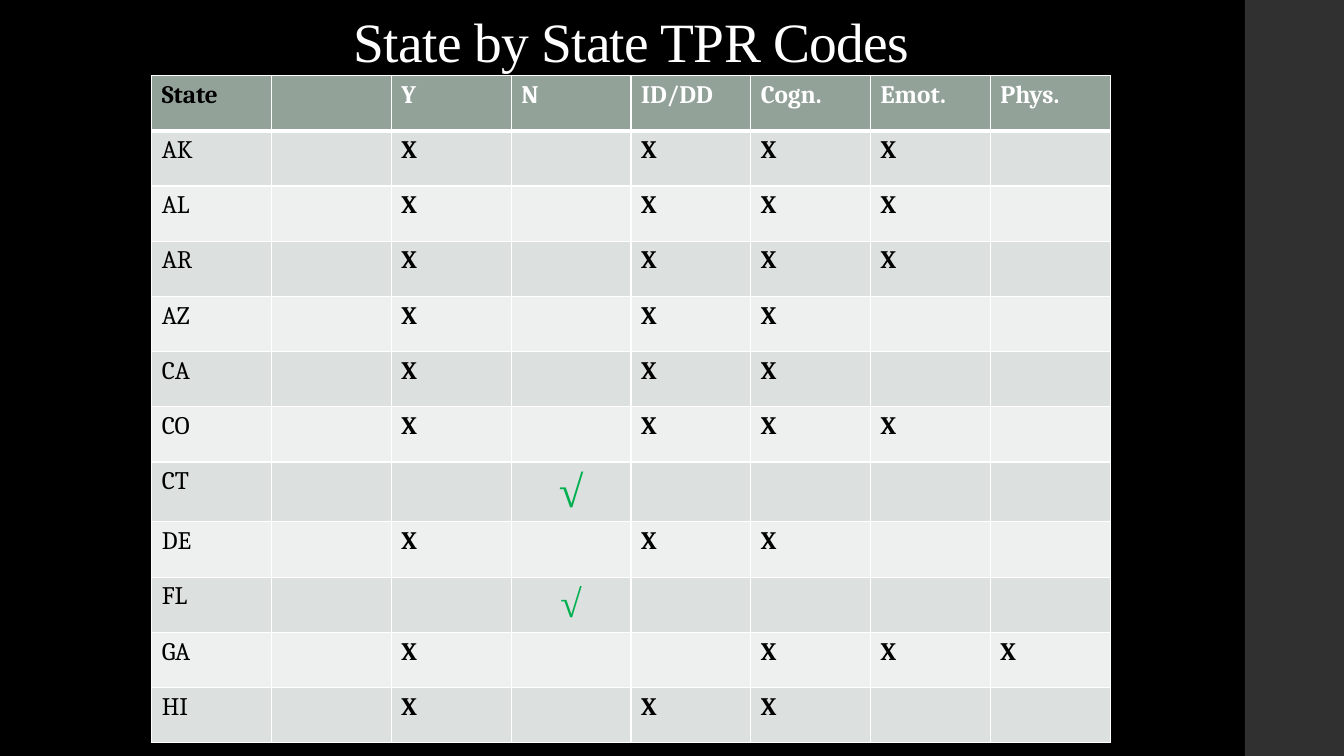
"""Build the slide of TPR codes by state."""
from dataclasses import dataclass

from lxml import etree
from pptx import Presentation
from pptx import util as u
from pptx.dml import color
from pptx.enum import shapes, text
from pptx.oxml import ns

HUES = {
    "black": "000000", "white": "FFFFFF", "side": "303030", "head": "93A299",
    "odd": "DCE0DE", "even": "EEF0EF", "green": "00B050",
}
BODY = {"name": "Cambria", "size": u.Pt(18), "bold": False}
BOLD = BODY | {"bold": True}
TITLE = {"name": "Times New Roman", "size": u.Pt(39.6), "bold": False}
HEADS = ("State", "", "Y", "N", "ID/DD", "Cogn.", "Emot.", "Phys.")
COL, ROW = 85.6, 39.43


@dataclass
class State:
    """Hold one state, its marked columns and the size of its tick."""

    code: str
    marks: tuple[str, ...] = ()
    tick: int = 0


COGN = ("Y", "ID/DD", "Cogn.")
EMOT = COGN + ("Emot.",)
STATES = (
    State("AK", EMOT), State("AL", EMOT), State("AR", EMOT),
    State("AZ", COGN), State("CA", COGN), State("CO", EMOT),
    State("CT", tick=32), State("DE", COGN), State("FL", tick=28),
    State("GA", ("Y", "Cogn.", "Emot.", "Phys.")), State("HI", COGN),
)


def rgb(hue: str) -> color.RGBColor:
    """Return the named colour."""
    return color.RGBColor.from_string(HUES[hue])


def paint(fill, hue: str) -> None:
    """Make a fill solid in the named colour."""
    fill.solid()
    fill.fore_color.rgb = rgb(hue)


def apply(item, form: dict) -> None:
    """Set each format value on an item."""
    for key, val in form.items():
        setattr(item, key, val)


def write(para, words: str, form: dict, hue: str):
    """Add a formatted run to a paragraph."""
    run = para.add_run()
    run.text = words
    apply(run.font, form)
    run.font.color.rgb = rgb(hue)
    return run


def edge(cell, top: float, base: float) -> None:
    """Draw the white borders of a cell."""
    props = cell._tc.get_or_add_tcPr()
    for side, width in {"L": 1, "R": 1, "T": top, "B": base}.items():
        line = etree.SubElement(props, ns.qn(f"a:ln{side}"), w=str(u.Pt(width)))
        solid = etree.SubElement(line, ns.qn("a:solidFill"))
        etree.SubElement(solid, ns.qn("a:srgbClr"), val=HUES["white"])


def draw_head(table) -> None:
    """Fill the header row."""
    for cell, name in zip(table.rows[0].cells, HEADS):
        edge(cell, 1, 3)
        paint(cell.fill, "head")
        if name:
            hue = "black" if name == "State" else "white"
            write(cell.text_frame.paragraphs[0], name, BOLD, hue)


def draw_row(table, num: int, state: State) -> None:
    """Fill the row of one state."""
    for cell, name in zip(table.rows[num].cells, HEADS):
        edge(cell, 3 if num == 1 else 1, 1)
        paint(cell.fill, "odd" if num % 2 else "even")
        para = cell.text_frame.paragraphs[0]
        if name == "State":
            write(para, state.code, BODY, "black")
        elif name in state.marks:
            write(para, "X", BOLD, "black")
        elif name == "N" and state.tick:
            para.alignment = text.PP_ALIGN.CENTER
            form = TITLE | {"size": u.Pt(state.tick), "bold": True}
            write(para, "√", form, "green")


def draw_title(title) -> None:
    """Place and format the title."""
    apply(title, {"left": u.Pt(190), "top": u.Pt(5.76),
                  "width": u.Pt(522), "height": u.Pt(97.2)})
    frame = title.text_frame
    apply(frame, {"word_wrap": True, "auto_size": text.MSO_AUTO_SIZE.NONE,
                  "vertical_anchor": text.MSO_ANCHOR.BOTTOM,
                  "margin_bottom": u.Pt(50)})
    para = frame.paragraphs[0]
    apply(para, {"alignment": text.PP_ALIGN.CENTER, "line_spacing": 0.9})
    run = write(para, "State by State TPR Codes", TITLE, "white")
    run._r.get_or_add_rPr().set("spc", "-50")


deck = Presentation()
apply(deck, {"slide_width": u.Pt(960), "slide_height": u.Pt(540)})
slide = deck.slides.add_slide(deck.slide_layouts[5])
paint(slide.background.fill, "black")

side = slide.shapes.add_shape(
    shapes.MSO_SHAPE.RECTANGLE, u.Pt(889.2), u.Pt(0), u.Pt(70.8), u.Pt(540))
side.shadow.inherit = False
paint(side.fill, "side")
side.line.fill.background()

draw_title(slide.shapes.title)

rows, cols = len(STATES) + 1, len(HEADS)
table = slide.shapes.add_table(
    rows, cols, u.Pt(108.4), u.Pt(54), u.Pt(COL * cols), u.Pt(ROW * rows)).table
for col in table.columns:
    col.width = u.Pt(COL)
for row in table.rows:
    row.height = u.Pt(ROW)
draw_head(table)
for num, state in enumerate(STATES, 1):
    draw_row(table, num, state)

deck.save("out.pptx")
